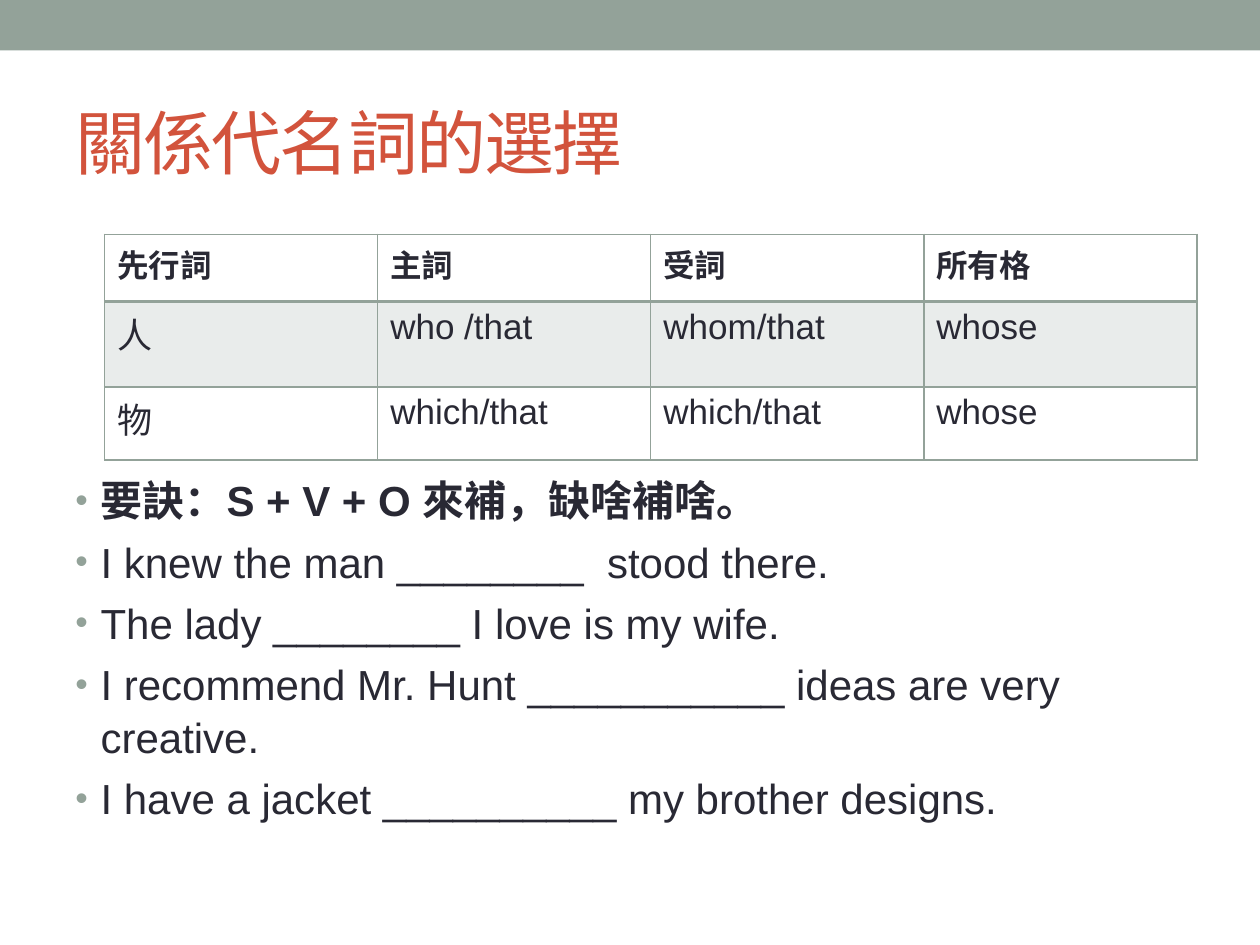
from dataclasses import dataclass

from lxml import etree
from pptx import Presentation
from pptx.dml.color import RGBColor
from pptx.enum.shapes import MSO_SHAPE
from pptx.enum.text import MSO_ANCHOR
from pptx.oxml.ns import qn
from pptx.util import Inches, Pt

RECTANGLE = MSO_SHAPE.RECTANGLE
MIDDLE = MSO_ANCHOR.MIDDLE


@dataclass(frozen=True)
class Theme:
    font: str = "Arial"
    accent: str = "93A299"
    heading: str = "D2533C"
    ink: str = "292934"
    band: str = "E9ECEB"
    title_size: int = 40
    body_size: int = 24
    header_size: int = 18
    cell_size: int = 20


class GrammarSlide:
    """Draws styled elements on one slide."""

    def __init__(self, slide, theme):
        self.slide = slide
        self.theme = theme

    def style(self, paragraph, size, color, bold=False):
        for run in paragraph.runs:
            font = run.font
            font.name = self.theme.font
            font.size = Pt(size)
            font.bold = bold
            font.color.rgb = RGBColor.from_string(color)

    def text_frame(self, left, top, width, height):
        box = self.slide.shapes.add_textbox(
            Inches(left), Inches(top), Inches(width), Inches(height))
        box.text_frame.word_wrap = True
        return box.text_frame

    def top_band(self, width, height):
        band = self.slide.shapes.add_shape(
            RECTANGLE, 0, 0, Inches(width), Inches(height))
        band.shadow.inherit = False
        band.fill.solid()
        band.fill.fore_color.rgb = RGBColor.from_string(self.theme.accent)
        band.line.fill.background()

    def title(self, wording, left, top, width, height):
        frame = self.text_frame(left, top, width, height)
        frame.vertical_anchor = MIDDLE
        frame.text = wording
        heading = frame.paragraphs[0]
        self.style(heading, self.theme.title_size, self.theme.heading)
        heading.runs[0].font._element.set("spc", "-100")

    def bullets(self, sentences, left, top, width, height):
        frame = self.text_frame(left, top, width, height)
        frame.text = "\n".join(sentences)
        for index, paragraph in enumerate(frame.paragraphs):
            self.style(paragraph, self.theme.body_size, self.theme.ink, index == 0)
            paragraph.line_spacing = 1.05
            paragraph.space_before = Pt(self.theme.body_size * 0.2)
            properties = paragraph._p.get_or_add_pPr()
            properties.set("marL", str(Inches(0.2)))
            properties.set("indent", str(-Inches(0.2)))
            color = etree.SubElement(properties, qn("a:buClr"))
            etree.SubElement(color, qn("a:srgbClr"), val=self.theme.accent)
            etree.SubElement(properties, qn("a:buSzPct"), val="85000")
            etree.SubElement(properties, qn("a:buFont"), typeface=self.theme.font)
            etree.SubElement(properties, qn("a:buChar"), char="•")

    def border(self, cell, side, points):
        line = etree.SubElement(
            cell._tc.get_or_add_tcPr(), qn(f"a:{side}"), w=str(Pt(points)))
        fill = etree.SubElement(line, qn("a:solidFill"))
        etree.SubElement(fill, qn("a:srgbClr"), val=self.theme.accent)

    def table(self, rows, left, top, width, heights):
        table = self.slide.shapes.add_table(
            len(rows), len(rows[0]), Inches(left), Inches(top),
            Inches(width), Inches(sum(heights))).table
        table.horz_banding = False
        for row_index, (wordings, height) in enumerate(zip(rows, heights)):
            table.rows[row_index].height = Inches(height)
            header = row_index == 0
            size = self.theme.header_size if header else self.theme.cell_size
            for column_index, wording in enumerate(wordings):
                cell = table.cell(row_index, column_index)
                cell.text = wording
                self.style(cell.text_frame.paragraphs[0], size, self.theme.ink, header)
                self.border(cell, "lnL", 1)
                self.border(cell, "lnR", 1)
                self.border(cell, "lnT", 2 if row_index == 1 else 1)
                self.border(cell, "lnB", 2 if header else 1)
                if row_index % 2:
                    cell.fill.solid()
                    cell.fill.fore_color.rgb = RGBColor.from_string(self.theme.band)
                else:
                    cell.fill.background()


def main():
    presentation = Presentation()
    presentation.slide_width = Inches(10)
    presentation.slide_height = Inches(7.5)
    page = GrammarSlide(
        presentation.slides.add_slide(presentation.slide_layouts[6]), Theme())

    page.top_band(10, 0.4)
    page.title("關係代名詞的選擇", 0.5, 0.58, 9, 1.08)
    page.bullets([
        "要訣：S + V + O 來補，缺啥補啥。",
        "I knew the man ________  stood there.",
        "The lady ________ I love is my wife.",
        "I recommend Mr. Hunt ___________ ideas are very creative.",
        "I have a jacket __________ my brother designs.",
    ], 0.5, 3.7, 9, 3.54)
    page.table([
        ["先行詞", "主詞", "受詞", "所有格"],
        ["人", "who /that", "whom/that", "whose"],
        ["物", "which/that", "which/that", "whose"],
    ], 0.83, 1.86, 8.67, [0.53, 0.68, 0.58])
    presentation.save("out.pptx")


if __name__ == "__main__":
    main()
